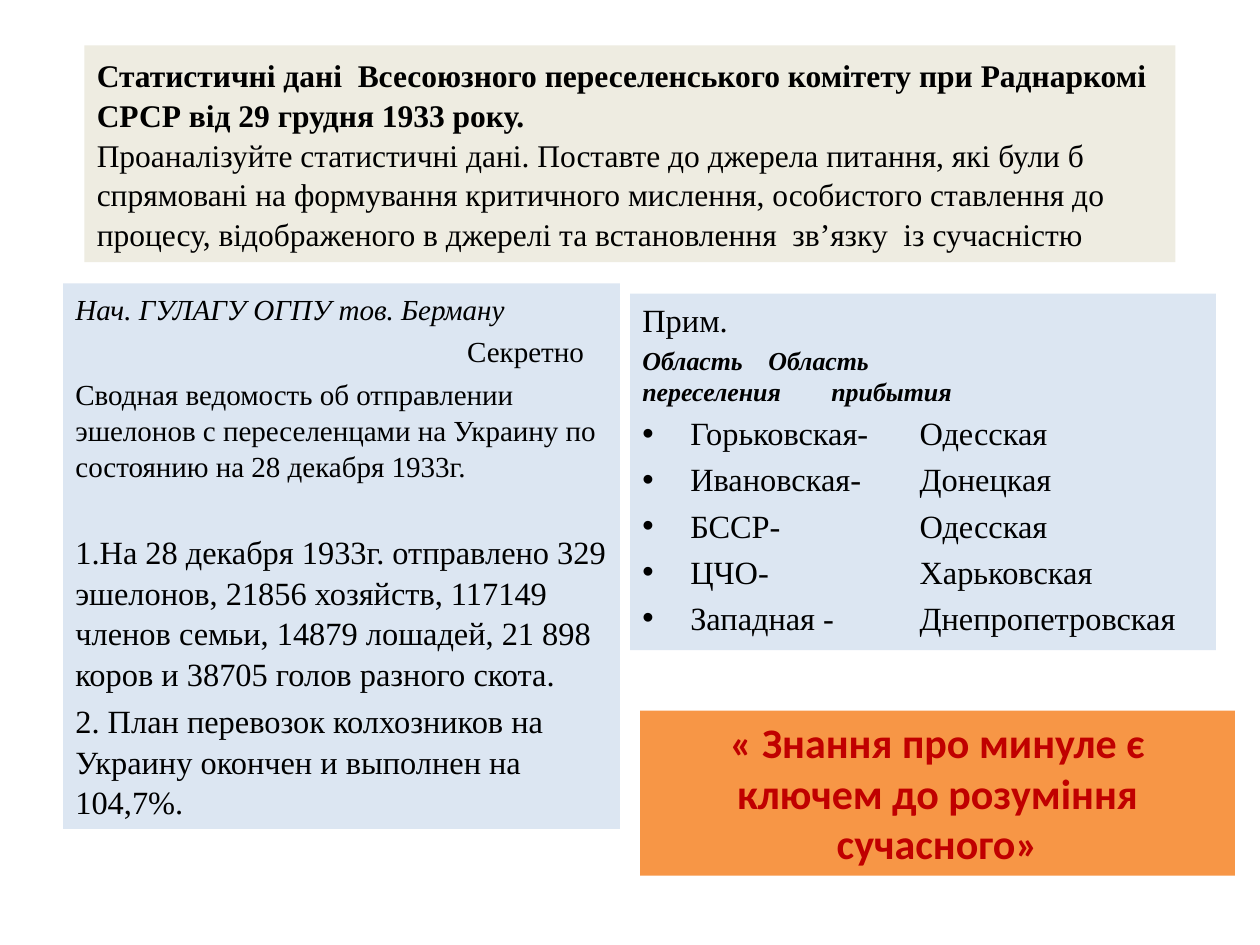
import pptx
import pptx.util
import pptx.dml.color
import pptx.enum.text
from lxml import etree

Inches, Pt = pptx.util.Inches, pptx.util.Pt
RGBColor = pptx.dml.color.RGBColor
ALIGN, ANCHOR = pptx.enum.text.PP_ALIGN, pptx.enum.text.MSO_ANCHOR
NAMESPACE = "{http://schemas.openxmlformats.org/drawingml/2006/main}"

BLACK = RGBColor(0x00, 0x00, 0x00)
RED = RGBColor(0xC0, 0x00, 0x00)
CREAM = RGBColor(0xEE, 0xEC, 0xE1)
PALE_BLUE = RGBColor(0xDC, 0xE6, 0xF2)
ORANGE = RGBColor(0xF7, 0x96, 0x46)

SERIF = {"name": "Times New Roman"}
BOLD = {"size": 18, "bold": True}
PLAIN = {"size": 18}
NOTE = {"size": 16.6}
NOTE_ITALIC = {"size": 16.6, "italic": True}
BODY = {"size": 18.5}
COLUMN_HEAD = {"size": 14.8, "bold": True, "italic": True}
MOTTO = {"size": 24, "bold": True, "name": "Calibri"}

REGIONS = [
    ("Горьковская-", "Одесская"),
    ("Ивановская-", "Донецкая"),
    ("БССР-", "Одесская"),
    ("ЦЧО-", "Харьковская"),
    ("Западная -", "Днепропетровская"),
]

# Each paragraph: list of (text, font) runs, then its layout; \v is a line break.
HEADING = [
    ([("Статистичні дані  Всесоюзного переселенського комітету при Раднаркомі "
       "СРСР від 29 грудня 1933 року.\v", BOLD),
      ("Проаналізуйте статистичні дані. Поставте до джерела питання, які були б "
       "спрямовані на формування критичного мислення, особистого ставлення до "
       "процесу, відображеного в джерелі та встановлення  зв’язку  із сучасністю",
       PLAIN)], {}),
]
REPORT = [
    ([("Нач. ГУЛАГУ ОГПУ тов. Берману", NOTE_ITALIC)], {}),
    ([("Секретно", NOTE)], {"indent": 3.11}),
    ([("Сводная ведомость об отправлении эшелонов с переселенцами на Украину по "
       "состоянию на 28 декабря 1933г.", NOTE)], {}),
    ([("1.На 28 декабря 1933г. отправлено 329 эшелонов, 21856 хозяйств, 117149 "
       "членов семьи, 14879 лошадей, 21 898 коров и 38705 голов разного скота.",
       BODY)], {"before": 27}),
    ([("2. План перевозок колхозников на Украину окончен и выполнен на 104,7%.",
       BODY)], {}),
]
DESTINATIONS = [
    ([("Прим.", BODY)], {}),
    ([("Область\tОбласть\vпереселения\tприбытия", COLUMN_HEAD)],
     {"tab": (2.45, "ctr")}),
] + [
    ([("\t".join(row), BODY)], {"indent": 0.38, "bullet": "•", "tab": (2.2, "l")})
    for row in REGIONS
]
CLOSING = [
    ([("« Знання про минуле є ключем до розуміння сучасного»", MOTTO)],
     {"align": ALIGN.CENTER, "before": 0}),
]

# left, top, width, height, fill, text colour, anchor, line spacing, paragraphs
BOXES = [
    (0.67, 0.36, 8.66, 1.72, CREAM, BLACK, ANCHOR.MIDDLE, 1.05, HEADING),
    (0.5, 2.25, 4.42, 4.33, PALE_BLUE, BLACK, ANCHOR.TOP, 1.04, REPORT),
    (5, 2.33, 4.65, 2.83, PALE_BLUE, BLACK, ANCHOR.TOP, 1.0, DESTINATIONS),
    (5.08, 5.64, 4.72, 1.31, ORANGE, RED, ANCHOR.TOP, 1.0, CLOSING),
]


def set_indents(paragraph, indent=0, bullet=None, tab=None):
    """Set the left margin, hanging bullet and tab stop of a paragraph."""
    properties = paragraph._p.get_or_add_pPr()
    properties.set("marL", str(Inches(indent)))
    properties.set("indent", str(-Inches(indent) if bullet else 0))
    if bullet:
        etree.SubElement(properties, NAMESPACE + "buFont", typeface="Arial")
        etree.SubElement(properties, NAMESPACE + "buChar", char=bullet)
    else:
        etree.SubElement(properties, NAMESPACE + "buNone")
    if tab:
        position, alignment = tab
        tab_list = etree.SubElement(properties, NAMESPACE + "tabLst")
        etree.SubElement(tab_list, NAMESPACE + "tab",
                         pos=str(Inches(position)), algn=alignment)


def add_run(paragraph, text, font, color):
    for index, line in enumerate(text.split("\v")):
        if index:
            paragraph.add_line_break()
        if not line:
            continue
        run = paragraph.add_run()
        run.text = line
        for name, value in {**SERIF, **font, "size": Pt(font["size"])}.items():
            setattr(run.font, name, value)
        run.font.color.rgb = color


def add_box(slide, left, top, width, height, fill, color, anchor, spacing, paragraphs):
    shape = slide.shapes.add_textbox(*map(Inches, (left, top, width, height)))
    shape.fill.solid()
    shape.fill.fore_color.rgb = fill
    frame = shape.text_frame
    frame.word_wrap = True
    frame.vertical_anchor = anchor
    for index, (runs, layout) in enumerate(paragraphs):
        paragraph = frame.add_paragraph() if index else frame.paragraphs[0]
        options = dict(layout)
        before = options.pop("before", 0.22 * runs[0][1]["size"] if index else 0)
        paragraph.alignment = options.pop("align", ALIGN.LEFT)
        paragraph.space_before = Pt(before)
        paragraph.line_spacing = spacing
        set_indents(paragraph, **options)
        for text, font in runs:
            add_run(paragraph, text, font, color)


def main():
    presentation = pptx.Presentation()
    presentation.slide_width = Inches(10)
    presentation.slide_height = Inches(7.5)
    slide = presentation.slides.add_slide(presentation.slide_layouts[6])
    for box in BOXES:
        add_box(slide, *box)
    presentation.save("out.pptx")


if __name__ == "__main__":
    main()
